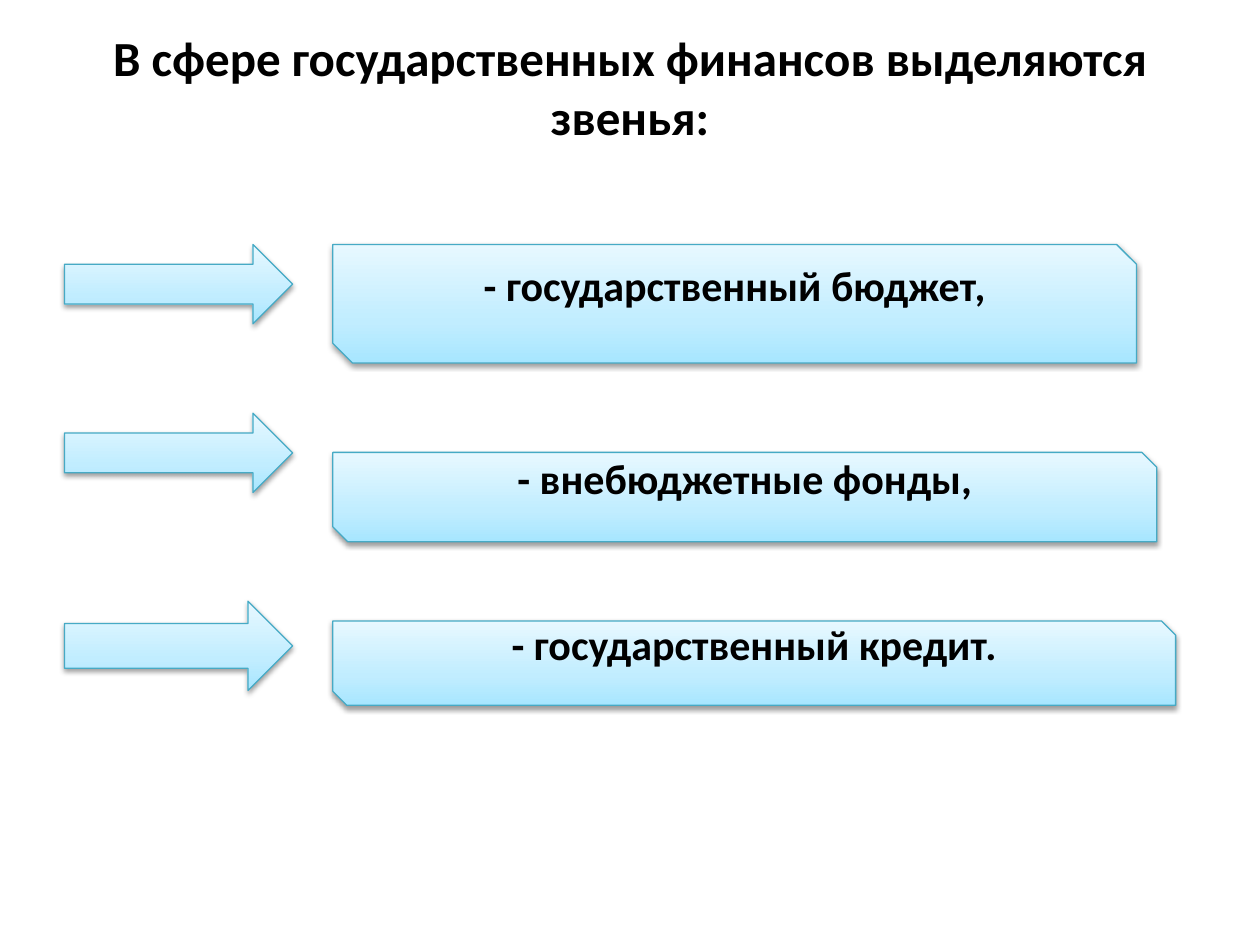
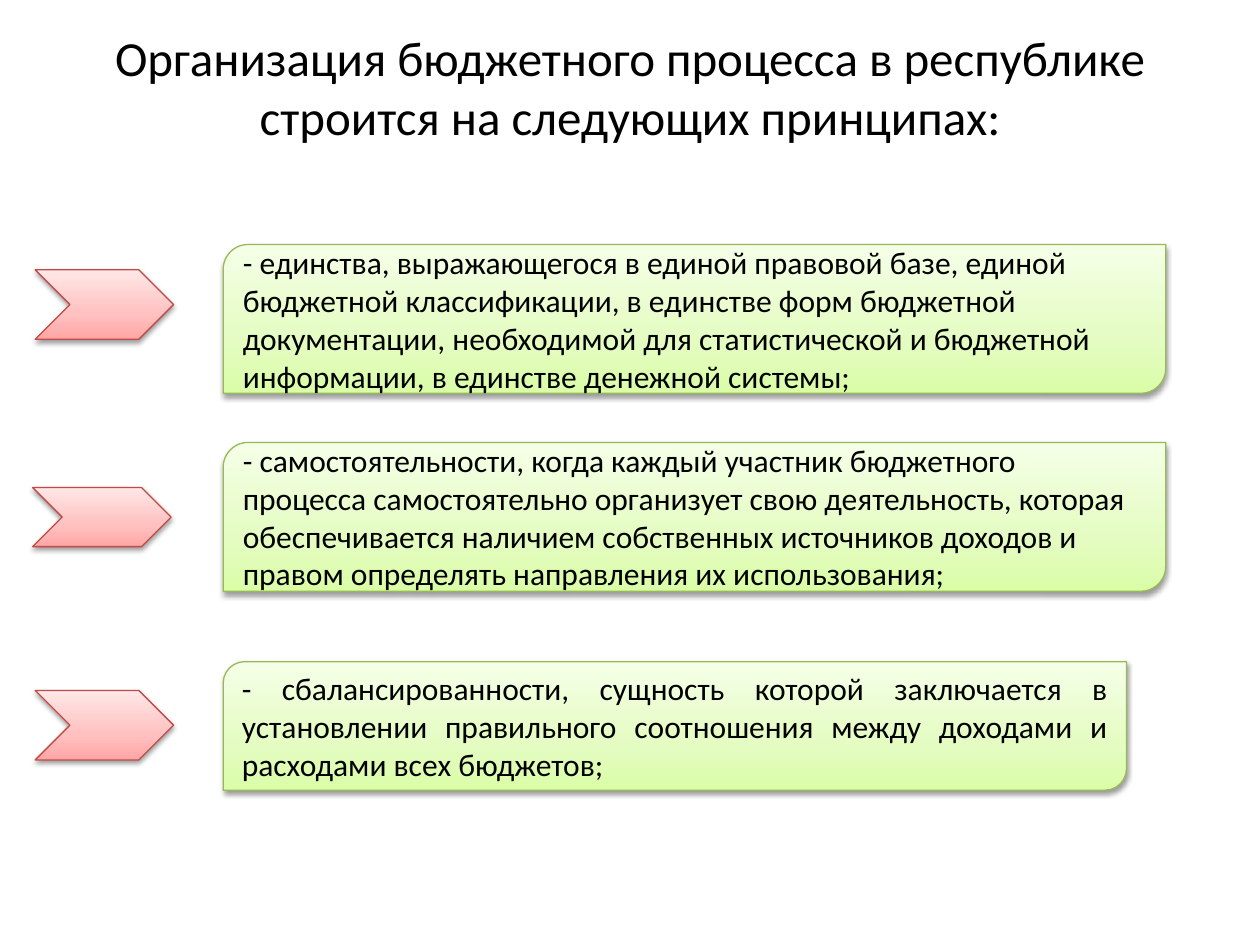
from collections import namedtuple

from lxml import etree
from pptx import Presentation
from pptx.dml.color import RGBColor
from pptx.enum.shapes import MSO_SHAPE
from pptx.enum.text import MSO_ANCHOR, MSO_AUTO_SIZE, PP_ALIGN
from pptx.oxml.ns import qn
from pptx.util import Cm, Pt

RIGHT_ARROW = MSO_SHAPE.RIGHT_ARROW
CHEVRON = MSO_SHAPE.CHEVRON
SNIPPED = MSO_SHAPE.SNIP_2_DIAG_RECTANGLE
ROUNDED = MSO_SHAPE.ROUND_2_DIAG_RECTANGLE
LEFT, CENTER, JUSTIFY = PP_ALIGN.LEFT, PP_ALIGN.CENTER, PP_ALIGN.JUSTIFY
MIDDLE = MSO_ANCHOR.MIDDLE
NO_AUTOFIT = MSO_AUTO_SIZE.NONE

FONT = "Calibri"
BLACK = RGBColor(0x00, 0x00, 0x00)
STOP_POSITIONS = (0, 35, 100)

Box = namedtuple("Box", "left top width height")
Palette = namedtuple("Palette", "line stops")
Row = namedtuple("Row", "box marker panel text align")

BLUE = Palette(
    RGBColor(0x46, 0xAA, 0xC5),
    (RGBColor(0xA7, 0xE6, 0xFF), RGBColor(0xC1, 0xED, 0xFF), RGBColor(0xE7, 0xF8, 0xFF)),
)
RED = Palette(
    RGBColor(0xBF, 0x4C, 0x48),
    (RGBColor(0xFF, 0xA6, 0xA5), RGBColor(0xFF, 0xC0, 0xBF), RGBColor(0xFF, 0xE7, 0xE7)),
)
GREEN = Palette(
    RGBColor(0x98, 0xB9, 0x55),
    (RGBColor(0xDA, 0xFD, 0xA7), RGBColor(0xE4, 0xFC, 0xC2), RGBColor(0xF5, 0xFF, 0xE7)),
)

TITLE_BOX = Box(1.27, 0.76, 22.86, 3.18)

FINANCE_TITLE = "В сфере государственных финансов выделяются звенья:"
FINANCE_ROWS = (
    Row((1.3, 4.93), Box(0, 0, 4.6, 1.6), Box(5.41, 0, 16.2, 2.39),
        "- государственный бюджет,", CENTER),
    Row((1.3, 8.33), Box(0, 0, 4.6, 1.6), Box(5.41, 0.79, 16.61, 1.8),
        "- внебюджетные фонды,", CENTER),
    Row((1.3, 12.12), Box(0, 0, 4.6, 1.8), Box(5.41, 0.4, 16.99, 1.7),
        "- государственный кредит.", CENTER),
)

BUDGET_TITLE = "Организация бюджетного процесса в республике строится на следующих принципах:"
BUDGET_ROWS = (
    Row((0.71, 4.93), Box(0, 0.51, 2.79, 1.4), Box(3.79, 0, 19, 3),
        "- единства, выражающегося в единой правовой базе, единой бюджетной "
        "классификации, в единстве форм бюджетной документации, необходимой для "
        "статистической и бюджетной информации, в единстве денежной системы;", LEFT),
    Row((0.66, 8.92), Box(0, 0.91, 2.79, 1.19), Box(3.84, 0, 19, 3),
        "- самостоятельности, когда каждый участник бюджетного процесса самостоятельно "
        "организует свою деятельность, которая обеспечивается наличием собственных "
        "источников доходов и правом определять направления их использования;", LEFT),
    Row((0.71, 13.34), Box(0, 0.58, 2.79, 1.4), Box(3.79, 0, 18.21, 2.59),
        "- сбалансированности, сущность которой заключается в установлении "
        "правильного соотношения между доходами и расходами всех бюджетов;", JUSTIFY),
)


def write_text(shape, text, size, align=CENTER, bold=False, bottom_margin=0.13):
    """Write one formatted, vertically centred paragraph into a shape."""
    frame = shape.text_frame
    frame.word_wrap = True
    frame.auto_size = NO_AUTOFIT
    frame.vertical_anchor = MIDDLE
    frame.margin_bottom = Cm(bottom_margin)
    paragraph = frame.paragraphs[0]
    paragraph.alignment = align
    run = paragraph.add_run()
    run.text = text
    run.font.name = FONT
    run.font.size = Pt(size)
    run.font.bold = bold
    run.font.color.rgb = BLACK


def add_color(parent, color):
    """Append an RGB colour element and return it."""
    return etree.SubElement(parent, qn("a:srgbClr"), val=str(color))


def fill_gradient(shape, colors):
    """Fill a shape with a vertical gradient, first colour at the bottom."""
    shape.fill.gradient()
    shape.fill.gradient_angle = 90
    stop_list = shape._element.spPr.find(f".//{qn('a:gsLst')}")
    for stop in list(stop_list):
        stop_list.remove(stop)
    for position, color in zip(STOP_POSITIONS, colors):
        add_color(etree.SubElement(stop_list, qn("a:gs"), pos=str(position * 1000)), color)


def add_shadow(shape):
    """Give a shape a soft shadow straight below it."""
    shape.shadow.inherit = False
    effects = shape._element.spPr.find(qn("a:effectLst"))
    shadow = etree.SubElement(
        effects, qn("a:outerShdw"), blurRad=str(Pt(3.1)), dist=str(Pt(1.6)),
        dir="5400000", rotWithShape="0",
    )
    etree.SubElement(add_color(shadow, BLACK), qn("a:alpha"), val="38000")


def add_glossy_shape(slide, kind, box, origin, palette):
    """Add a gradient shape whose box is relative to the origin."""
    left, top = origin
    shape = slide.shapes.add_shape(
        kind, Cm(left + box.left), Cm(top + box.top), Cm(box.width), Cm(box.height)
    )
    fill_gradient(shape, palette.stops)
    shape.line.color.rgb = palette.line
    shape.line.width = Pt(0.75)
    add_shadow(shape)
    return shape


def add_row(slide, row, marker_style, panel_style, **text_format):
    """Add a marker and the text panel it points to."""
    marker_kind, marker_palette = marker_style
    panel_kind, panel_palette = panel_style
    add_glossy_shape(slide, marker_kind, row.marker, row.box, marker_palette)
    panel = add_glossy_shape(slide, panel_kind, row.panel, row.box, panel_palette)
    write_text(panel, row.text, align=row.align, **text_format)


def add_list_slide(presentation, title, rows, marker_style, panel_style,
                   bold_title=False, **text_format):
    """Add a titled slide with one marked panel per row."""
    slide = presentation.slides.add_slide(presentation.slide_layouts[5])
    heading = slide.shapes.title
    heading.left, heading.top, heading.width, heading.height = map(Cm, TITLE_BOX)
    write_text(heading, title, size=28, bold=bold_title, bottom_margin=1.33)
    for row in rows:
        add_row(slide, row, marker_style, panel_style, **text_format)


def main():
    """Build and save the presentation."""
    presentation = Presentation()
    presentation.slide_width, presentation.slide_height = Cm(25.4), Cm(19.05)
    add_list_slide(presentation, FINANCE_TITLE, FINANCE_ROWS,
                   (RIGHT_ARROW, BLUE), (SNIPPED, BLUE),
                   bold_title=True, size=24, bold=True, bottom_margin=0.9)
    add_list_slide(presentation, BUDGET_TITLE, BUDGET_ROWS,
                   (CHEVRON, RED), (ROUNDED, GREEN), size=18)
    presentation.save("out.pptx")


if __name__ == "__main__":
    main()
